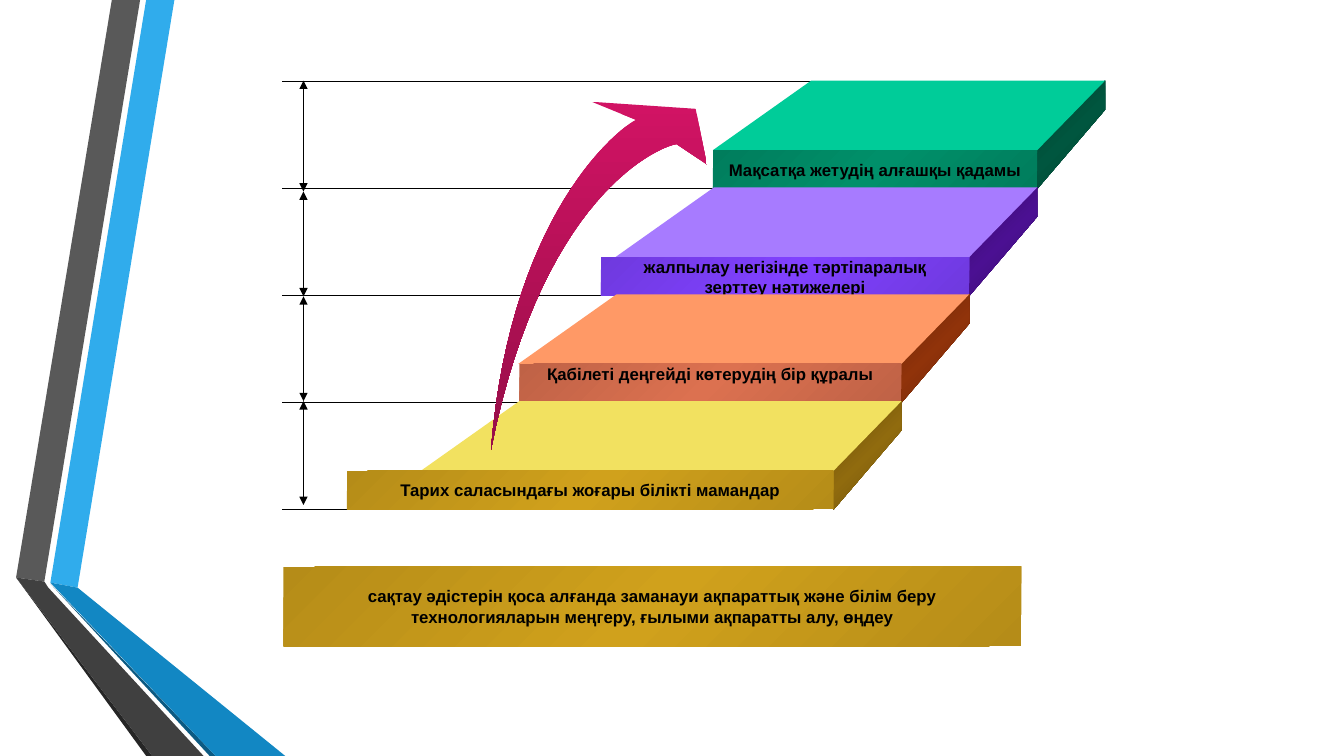
"""Build a slide with a four-step staircase, a rising arrow and a summary bar."""
from dataclasses import dataclass

from lxml.etree import SubElement
from pptx import Presentation
from pptx.dml.color import RGBColor
from pptx.enum.shapes import MSO_CONNECTOR, MSO_SHAPE
from pptx.enum.text import MSO_ANCHOR, PP_ALIGN
from pptx.oxml.ns import qn
from pptx.shapes.base import BaseShape
from pptx.shapes.shapetree import SlideShapes
from pptx.util import Emu, Inches, Pt

COLUMNS, ROWS = 133.3, 75
CELL = Inches(0.1)

Point = tuple[float, float]
Colours = tuple[str, ...]


@dataclass(frozen=True)
class Theme:
    font: str = "Arial"
    text_size: float = 12
    line_width: float = 0.75
    ink: str = "000000"
    gold: Colours = ("B58C18", "D0A11C", "B58C18")
    rise: Colours = ("D11364", "960E48")
    grey: str = "595959"
    grey_fold: str = "404040"
    grey_edge: str = "262626"
    blue: str = "30ACEC"
    blue_fold: str = "1287C3"
    blue_edge: str = "0C5A82"


THEME = Theme()


@dataclass(frozen=True)
class Step:
    lines: tuple[str, ...]
    front_left: float
    top: str
    front: Colours
    side: Colours
    anchor: MSO_ANCHOR = MSO_ANCHOR.MIDDLE


@dataclass(frozen=True)
class Ribbon:
    colour: str
    outline: tuple[Point, ...]


STEPS = (
    Step(("Мақсатқа жетудің алғашқы қадамы",), 70.7, "00CC99",
         ("007D5C", "00906A", "007D5C"), ("003E2D", "00563F", "003E2D")),
    Step(("жалпылау негізінде тәртіпаралық", "зерттеу нәтижелері"), 59.6, "A77BFF",
         ("6F39DE", "8041FF", "6F39DE"), ("360B68", "4B1092", "360B68")),
    Step(("Қабілеті деңгейді көтерудің бір құралы",), 51.5, "FF9966",
         ("BF6246", "DC7150", "BF6246"), ("672407", "90330A", "672407"),
         MSO_ANCHOR.TOP),
    Step(("Тарих саласындағы жоғары білікті мамандар",), 34.4, "F2E160",
         THEME.gold, ("674D0A", "906B0E", "674D0A")),
)
SUMMARY = (
    "сақтау әдістерін қоса алғанда заманауи ақпараттық және білім беру",
    "технологияларын меңгеру, ғылыми ақпаратты алу, өңдеу",
)
RIBBONS = (
    Ribbon(THEME.blue, ((5, 57.8), (7.7, 58.3), (17.3, 0), (14.5, 0))),
    Ribbon(THEME.grey, ((13.9, 0), (11.1, 0), (1.6, 57.3), (4.4, 57.7))),
    Ribbon(THEME.grey_edge, ((1.6, 57.3), (14.5, 75), (15.1, 75))),
    Ribbon(THEME.blue_edge, ((5, 57.9), (20.8, 75), (21.4, 75))),
    Ribbon(THEME.blue_fold, ((5, 57.8), (21.4, 75), (28.3, 75), (7.7, 58.3))),
    Ribbon(THEME.grey_fold, ((20.2, 75), (4.8, 58.3), (4.4, 57.7), (1.6, 57.3), (15.1, 75))),
)
STAIR_TOP, STEP_PITCH = 8, 10.6
SIDE_RIGHT, SIDE_SHIFT = 109.6, 6.73
FACE_LEFT, FACE_SHIFT, FACE_SLANT = 70.7, 9.65, 9.75
FACE_DEPTH, FRONT_HEIGHT, SIDE_EDGE = 6.9, 3.85, 2.9
LEVEL_LEFT, HEIGHT_COLUMN = 28, 30.1
HEIGHT_MARKS = (8, 19, 29.4, 39.8, 50.1)


def cells(count: float) -> Emu:
    """Convert grid cells to a length."""
    return Emu(round(count * CELL))


def paint(shape: BaseShape, colours: Colours, angle: int = 45) -> None:
    """Fill with one colour or an even gradient, without outline or shadow."""
    shape.shadow.inherit = False
    shape.line.fill.background()
    if len(colours) == 1:
        shape.fill.solid()
        shape.fill.fore_color.rgb = RGBColor.from_string(colours[0])
        return
    shape.fill.gradient()
    shape.fill.gradient_angle = 360 - angle
    stops = next(shape.element.spPr.iter(qn("a:gsLst")))
    for stop in list(stops):
        stops.remove(stop)
    for index, colour in enumerate(colours):
        position = 100000 * index // (len(colours) - 1)
        stop = SubElement(stops, qn("a:gs"), pos=str(position))
        SubElement(stop, qn("a:srgbClr"), val=colour)


def add_outline(shapes: SlideShapes, points: list[Point] | tuple[Point, ...],
                colours: Colours, angle: int = 45) -> None:
    """Draw a closed, filled polygon."""
    start, *rest = [(cells(x), cells(y)) for x, y in points]
    builder = shapes.build_freeform(*start)
    builder.add_line_segments(rest, close=True)
    paint(builder.convert_to_shape(), colours, angle)


def add_bar(shapes: SlideShapes, left: float, top: float, width: float, height: float,
            lines: tuple[str, ...], colours: Colours,
            anchor: MSO_ANCHOR = MSO_ANCHOR.MIDDLE) -> None:
    """Draw a gradient bar with centred bold lines."""
    bar = shapes.add_shape(MSO_SHAPE.RECTANGLE, cells(left), cells(top),
                           cells(width), cells(height))
    paint(bar, colours)
    frame = bar.text_frame
    frame.word_wrap = False
    frame.vertical_anchor = anchor
    frame.margin_top = frame.margin_bottom = 0
    for index, line in enumerate(lines):
        paragraph = frame.add_paragraph() if index else frame.paragraphs[0]
        paragraph.alignment = PP_ALIGN.CENTER
        run = paragraph.add_run()
        run.text = line
        run.font.name = THEME.font
        run.font.size = Pt(THEME.text_size)
        run.font.bold = True
        run.font.color.rgb = RGBColor.from_string(THEME.ink)


def add_rule(shapes: SlideShapes, start: Point, end: Point, arrows: bool = False) -> None:
    """Draw a thin line, optionally with an arrowhead at each end."""
    rule = shapes.add_connector(MSO_CONNECTOR.STRAIGHT, cells(start[0]), cells(start[1]),
                                cells(end[0]), cells(end[1]))
    rule.line.width = Pt(THEME.line_width)
    rule.line.color.rgb = RGBColor.from_string(THEME.ink)
    if arrows:
        stroke = rule.line._get_or_add_ln()
        for tag in ("a:headEnd", "a:tailEnd"):
            SubElement(stroke, qn(tag), type="triangle")
    SubElement(rule.element.spPr, qn("a:effectLst"))


def add_step(shapes: SlideShapes, index: int, step: Step) -> None:
    """Draw the side, top and front of one stair."""
    top = STAIR_TOP + index * STEP_PITCH
    edge = top + FACE_DEPTH
    right = SIDE_RIGHT - index * SIDE_SHIFT
    front_right = right - SIDE_SHIFT
    left = FACE_LEFT - index * FACE_SHIFT
    add_outline(shapes, ((right, top + SIDE_EDGE), (front_right, edge + FRONT_HEIGHT),
                         (front_right, edge), (right, top)), step.side)
    add_outline(shapes, ((front_right, edge), (left, edge),
                         (left + FACE_SLANT, top), (right, top)), (step.top,))
    add_bar(shapes, step.front_left, edge, front_right - step.front_left, FRONT_HEIGHT,
            step.lines, step.front, step.anchor)


def curve(a: Point, b: Point, c: Point, d: Point, pieces: int = 30) -> list[Point]:
    """Sample a cubic Bézier curve."""
    def blend(t: float, axis: int) -> float:
        s = 1 - t
        return (s**3 * a[axis] + 3 * s * s * t * b[axis]
                + 3 * s * t * t * c[axis] + t**3 * d[axis])
    return [(blend(i / pieces, 0), blend(i / pieces, 1)) for i in range(pieces + 1)]


def main() -> None:
    """Compose and save the slide."""
    deck = Presentation()
    deck.slide_width, deck.slide_height = cells(COLUMNS), cells(ROWS)
    shapes = deck.slides.add_slide(deck.slide_layouts[6]).shapes
    for ribbon in RIBBONS:
        add_outline(shapes, ribbon.outline, (ribbon.colour,))
    for level in range(len(STEPS) + 1):
        row = STAIR_TOP + 0.1 + level * STEP_PITCH
        level_right = FACE_LEFT + FACE_SLANT - level * FACE_SHIFT
        add_rule(shapes, (level_right, row), (LEVEL_LEFT, row))
    for upper, lower in zip(HEIGHT_MARKS, HEIGHT_MARKS[1:]):
        add_rule(shapes, (HEIGHT_COLUMN, upper), (HEIGHT_COLUMN, lower), arrows=True)
    for index, step in enumerate(STEPS):
        add_step(shapes, index, step)
    tail = (48.7, 44.6)
    outer = curve(tail, (50.6, 21.4), (61.2, 12.8), (63.1, 11.9))
    head = [(58.7, 10.1), (69, 10.8), (70.1, 16.3)]
    inner = curve((67.1, 14.3), (65.2, 14.6), (53.7, 19.5), tail)
    add_outline(shapes, outer + head + inner[:-1], THEME.rise, angle=90)
    add_bar(shapes, 28.1, 56.2, 73.2, 7.9, SUMMARY, THEME.gold)
    deck.save("out.pptx")


if __name__ == "__main__":
    main()
